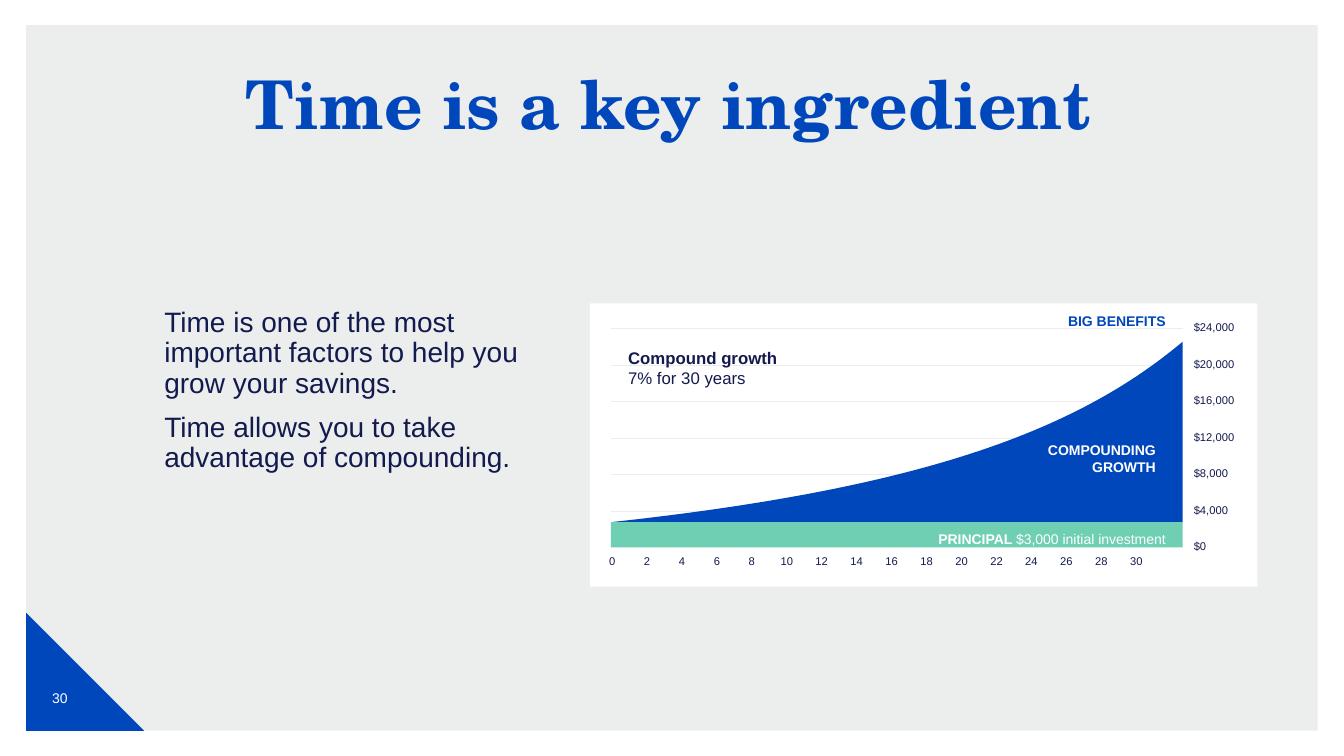
from lxml import etree
from pptx import Presentation
from pptx.dml.color import RGBColor
from pptx.enum.shapes import MSO_CONNECTOR, MSO_SHAPE
from pptx.enum.text import MSO_ANCHOR, PP_ALIGN
from pptx.oxml.ns import qn
from pptx.util import Inches, Pt

LEFT, CENTER, RIGHT = PP_ALIGN.LEFT, PP_ALIGN.CENTER, PP_ALIGN.RIGHT
TOP, MIDDLE = MSO_ANCHOR.TOP, MSO_ANCHOR.MIDDLE
RECTANGLE, RIGHT_TRIANGLE = MSO_SHAPE.RECTANGLE, MSO_SHAPE.RIGHT_TRIANGLE
STRAIGHT = MSO_CONNECTOR.STRAIGHT

BLUE = RGBColor(0x00, 0x47, 0xBB)
NAVY = RGBColor(0x13, 0x1A, 0x4D)
GREEN = RGBColor(0x6E, 0xCF, 0xB2)
GREY = RGBColor(0xD0, 0xD3, 0xD4)
GRID_GREY = RGBColor(0xEB, 0xEC, 0xEE)
WHITE = RGBColor(0xFF, 0xFF, 0xFF)

PLOT_LEFT, PLOT_RIGHT = 6.06, 11.73
GRID_TOP, GRID_STEP = 3.26, 0.362
PRINCIPAL_TOP, GROWTH_TOP = 5.18, 3.39
YEAR_STEP = 5.2 / 15
CHART_MARGINS = (0, 0.05, 0.1, 0.05)
BODY_MARGINS = (0, 0.05, 0, 0.05)


def paint(shape, color):
    shape.fill.solid()
    shape.fill.fore_color.rgb = color
    shape.line.fill.background()
    shape.shadow.inherit = False


def add_block(slide, kind, box, color):
    block = slide.shapes.add_shape(kind, *map(Inches, box))
    paint(block, color)
    return block


def add_text(slide, box, text, size, color, align=LEFT, anchor=MIDDLE,
             margins=CHART_MARGINS, font="Arial", bold=False, line_spacing=None):
    """Add a text box; each line of text becomes a paragraph."""
    label = slide.shapes.add_textbox(*map(Inches, box))
    frame = label.text_frame
    frame.word_wrap = True
    frame.vertical_anchor = anchor
    (frame.margin_left, frame.margin_top,
     frame.margin_right, frame.margin_bottom) = map(Inches, margins)
    frame.text = text
    for index, paragraph in enumerate(frame.paragraphs):
        paragraph.alignment = align
        if line_spacing:
            paragraph.line_spacing = line_spacing
        if index:
            paragraph.space_before = Pt(10)
        for run in paragraph.runs:
            style_run(run, size, color, bold, font)
    return frame


def style_run(run, size, color, bold, font="Arial"):
    run.font.name = font
    run.font.size = Pt(size)
    run.font.bold = bold
    run.font.color.rgb = color


def add_gridline(slide, y):
    line = slide.shapes.add_connector(
        STRAIGHT, Inches(PLOT_LEFT), Inches(y), Inches(PLOT_RIGHT), Inches(y))
    line.line.color.rgb = GRID_GREY
    line.line.width = Pt(0.5)
    etree.SubElement(line._element.spPr, qn("a:effectLst"))


def add_growth_area(slide):
    """Fill the area under a cubic curve, sampled in short steps."""
    controls = [(PLOT_LEFT, PRINCIPAL_TOP), (9.1, 4.85), (10.66, 4.29),
                (PLOT_RIGHT, GROWTH_TOP)]
    steps = 60
    curve = []
    for step in range(steps + 1):
        t = step / steps
        weights = ((1 - t) ** 3, 3 * t * (1 - t) ** 2, 3 * t ** 2 * (1 - t), t ** 3)
        curve.append(tuple(
            Inches(sum(w * point[axis] for w, point in zip(weights, controls)))
            for axis in (0, 1)))
    builder = slide.shapes.build_freeform(*curve[0])
    corner = (Inches(PLOT_RIGHT), Inches(PRINCIPAL_TOP))
    builder.add_line_segments(curve[1:] + [corner], close=True)
    paint(builder.convert_to_shape(), BLUE)


def add_year_axis(slide):
    years = "\t".join(str(year) for year in range(0, 31, 2))
    frame = add_text(slide, (6.04, 5.46, 5.85, 0.21), years, 8, NAVY)
    properties = frame.paragraphs[0]._p.get_or_add_pPr()
    tabs = etree.SubElement(properties, qn("a:tabLst"))
    for index in range(1, 16):
        position = Inches(0.03 + index * YEAR_STEP)
        etree.SubElement(tabs, qn("a:tab"), pos=str(int(position)), algn="ctr")


def add_background(slide):
    panel = add_block(slide, RECTANGLE, (0.26, 0.25, 12.81, 7), GREY)
    color = panel._element.spPr.find(qn("a:solidFill"))[0]
    etree.SubElement(color, qn("a:alpha"), val="40000")
    add_block(slide, RIGHT_TRIANGLE, (0.26, 6.08, 1.17, 1.17), BLUE)
    add_text(slide, (0.32, 6.63, 0.55, 0.58), "30", 10, WHITE, CENTER,
             margins=(0.1, 0.05, 0.1, 0.05))


def add_growth_chart(slide):
    add_block(slide, RECTANGLE, (5.85, 3.01, 6.62, 2.81), WHITE)
    for index, amount in enumerate(range(24000, -1, -4000)):
        y = GRID_TOP + index * GRID_STEP
        add_text(slide, (11.84, y - 0.16, 0.63, 0.29), f"${amount:,}", 8, NAVY)
        if amount:
            add_gridline(slide, y)
    add_year_axis(slide)
    add_growth_area(slide)
    add_block(slide, RECTANGLE,
              (PLOT_LEFT, PRINCIPAL_TOP, PLOT_RIGHT - PLOT_LEFT, 0.25), GREEN)
    add_text(slide, (10.34, 4.26, 1.22, 0.57), "COMPOUNDING GROWTH",
             10, WHITE, RIGHT, bold=True)
    principal = add_text(slide, (8.22, 5.18, 3.44, 0.33), "PRINCIPAL ",
                         10, WHITE, RIGHT, bold=True)
    investment = principal.paragraphs[0].add_run()
    investment.text = "$3,000 initial investment"
    style_run(investment, 10, WHITE, False)
    add_text(slide, (10.53, 2.9, 1.13, 0.57), "BIG BENEFITS",
             10, BLUE, RIGHT, bold=True)
    heading = add_text(slide, (6.23, 3.22, 1.74, 0.85),
                       "Compound growth\v7% for 30 years", 12, NAVY)
    heading.paragraphs[0].runs[0].font.bold = True


def main():
    presentation = Presentation()
    presentation.slide_width = Inches(13.33)
    presentation.slide_height = Inches(7.5)
    slide = presentation.slides.add_slide(presentation.slide_layouts[6])
    add_background(slide)
    add_growth_chart(slide)
    add_text(slide, (1.6, 0.66, 10.06, 1.76), "Time is a key ingredient", 48, BLUE,
             CENTER, TOP, BODY_MARGINS, "TeX Gyre Schola", True, 0.9)
    add_text(slide, (1.63, 3.01, 3.63, 2.81),
             "Time is one of the most important factors to help you grow your savings.\n"
             "Time allows you to take advantage of compounding.",
             20, NAVY, anchor=TOP, margins=BODY_MARGINS, line_spacing=0.9)
    presentation.save("out.pptx")


if __name__ == "__main__":
    main()
